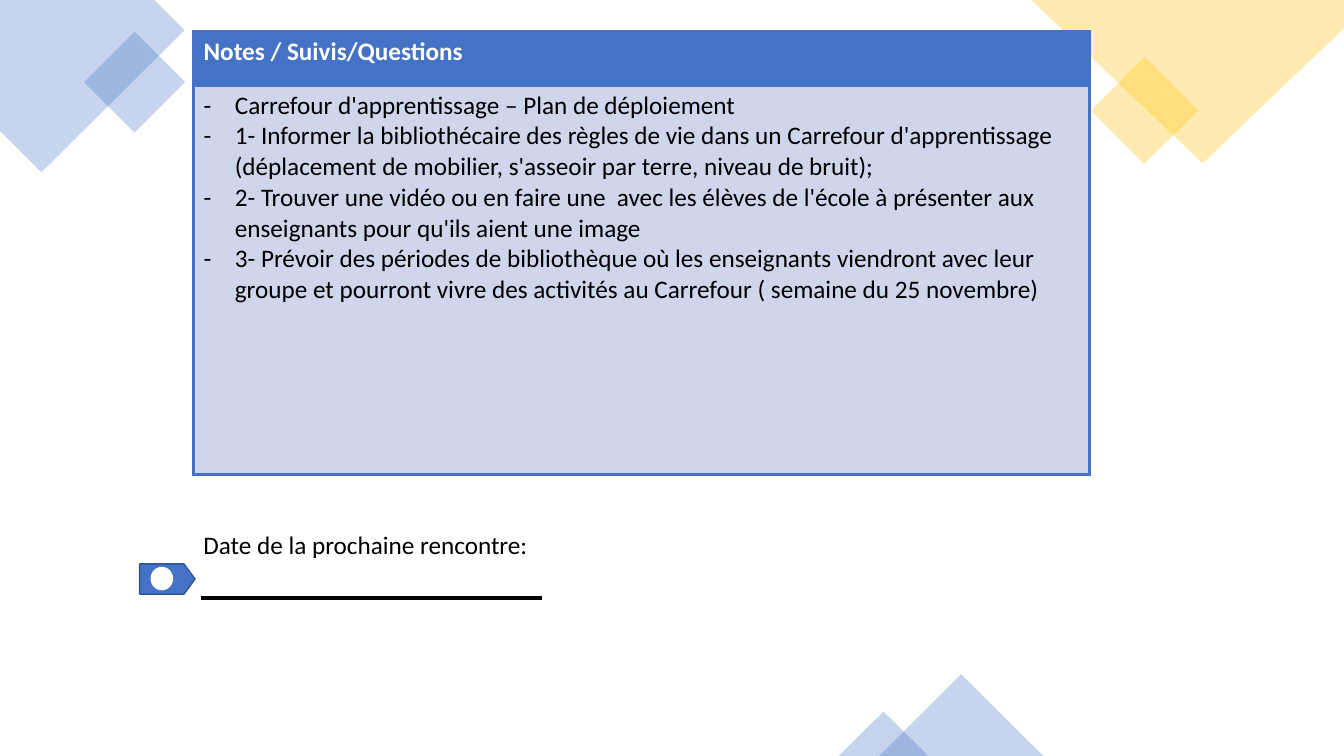
from typing import NamedTuple

from lxml import etree
from pptx import Presentation
from pptx import util as u
from pptx.dml.color import RGBColor
from pptx.enum import shapes, text
from pptx.oxml import ns

BLUE = RGBColor(0x44, 0x72, 0xC4)
DARK_BLUE = RGBColor(0x32, 0x54, 0x91)
PALE_BLUE = RGBColor(0xCF, 0xD5, 0xEA)
GOLD = RGBColor(0xFF, 0xC0, 0x00)
WHITE = RGBColor(0xFF, 0xFF, 0xFF)
BLACK = RGBColor(0x00, 0x00, 0x00)

SLIDE_WIDTH, SLIDE_HEIGHT = u.Inches(13.33), u.Inches(7.5)
FONT, FONT_SIZE = "Calibri", u.Pt(18)
BORDER_WIDTH = u.Pt(2.25)
DASH_INDENT = u.Inches(0.31)
VEIL_OPACITY = 30

KIND = shapes.MSO_SHAPE


class Box(NamedTuple):
    """A frame in percent of the slide's width and height."""
    left: float
    top: float
    width: float
    height: float


class Preset(NamedTuple):
    kind: KIND
    box: Box
    fill: RGBColor
    line: RGBColor | None = None
    rotation: int = 0
    opacity: int = 100


class Corner(NamedTuple):
    points: list[tuple[float, float]]
    fill: RGBColor


CORNERS = [
    Corner([(0, 0), (11.48, 0), (13.73, 4), (3.08, 22.8), (0, 17.33)], BLUE),
    Corner([(100, 0), (76.73, 0), (89.48, 21.6), (100, 3.73)], GOLD),
]
VEILS = [
    Preset(KIND.RECTANGLE, Box(7.35, 6.13, 5.33, 9.47), BLUE, rotation=315, opacity=VEIL_OPACITY),
    Preset(KIND.RECTANGLE, Box(82.35, 9.6, 5.63, 10), GOLD, rotation=315, opacity=VEIL_OPACITY),
    Preset(KIND.ISOSCELES_TRIANGLE, Box(65.4, 89.2, 12.23, 10.8), BLUE, opacity=VEIL_OPACITY),
    Preset(KIND.ISOSCELES_TRIANGLE, Box(62.4, 94.13, 6.68, 5.87), BLUE, opacity=VEIL_OPACITY),
]
MARKER = [
    Preset(KIND.FLOWCHART_OFFPAGE_CONNECTOR, Box(11.33, 72.93, 2.25, 7.33), BLUE, DARK_BLUE, 270),
    Preset(KIND.OVAL, Box(11.25, 75.07, 1.58, 2.93), WHITE, WHITE),
]

NOTES_BOX = Box(14.4, 4.2, 66.68, 58.54)
HEADING_HEIGHT = 7.07
HEADING = "Notes / Suivis/Questions"
NOTES = [
    "Carrefour d'apprentissage – Plan de déploiement",
    "1- Informer la bibliothécaire des règles de vie dans un Carrefour d'apprentissage "
    "(déplacement de mobilier, s'asseoir par terre, niveau de bruit);",
    "2- Trouver une vidéo ou en faire une  avec les élèves de l'école à présenter aux "
    "enseignants pour qu'ils aient une image",
    "3- Prévoir des périodes de bibliothèque où les enseignants viendront avec leur "
    "groupe et pourront vivre des activités au Carrefour ( semaine du 25 novembre)",
]
NEXT_MEETING = "Date de la prochaine rencontre:"
NEXT_MEETING_BOX = Box(14.4, 69.33, 25.95, 9.47)
DATE_LINE_LEFT, DATE_LINE_RIGHT, DATE_LINE_Y = 14.93, 40.35, 79.07


def across(share: float) -> int:
    return round(SLIDE_WIDTH * share / 100)


def down(share: float) -> int:
    return round(SLIDE_HEIGHT * share / 100)


def frame(box: Box) -> tuple[int, int, int, int]:
    return across(box.left), down(box.top), across(box.width), down(box.height)


def paint(shape, fill: RGBColor, line: RGBColor | None, opacity: int) -> None:
    shape.shadow.inherit = False
    shape.fill.solid()
    shape.fill.fore_color.rgb = fill
    if opacity < 100:
        color = shape.fill._xPr.find(f".//{ns.qn('a:srgbClr')}")
        etree.SubElement(color, ns.qn("a:alpha"), val=str(opacity * 1000))
    if line is None:
        shape.line.fill.background()
    else:
        shape.line.color.rgb = line
        shape.line.width = u.Pt(1)


def draw_corner(slide, corner: Corner) -> None:
    first, *rest = [(across(x), down(y)) for x, y in corner.points]
    outline = slide.shapes.build_freeform(*first)
    outline.add_line_segments(rest, close=True)
    paint(outline.convert_to_shape(), corner.fill, None, VEIL_OPACITY)


def draw_preset(slide, preset: Preset) -> None:
    shape = slide.shapes.add_shape(preset.kind, *frame(preset.box))
    shape.rotation = preset.rotation
    paint(shape, preset.fill, preset.line, preset.opacity)


def write(paragraph, words: str, color: RGBColor, bold: bool = False) -> None:
    run = paragraph.add_run()
    run.text = words
    run.font.name, run.font.size = FONT, FONT_SIZE
    run.font.bold = bold
    run.font.color.rgb = color


def add_dash(paragraph) -> None:
    """Give the paragraph a hanging dash as its bullet."""
    properties = paragraph._p.get_or_add_pPr()
    properties.set("marL", str(DASH_INDENT))
    properties.set("indent", str(-DASH_INDENT))
    etree.SubElement(properties, ns.qn("a:buFont"), typeface=FONT)
    etree.SubElement(properties, ns.qn("a:buChar"), char="-")


def style_cell(cell, fill: RGBColor) -> None:
    properties = cell._tc.get_or_add_tcPr()
    for side in ("lnL", "lnR", "lnT", "lnB"):
        border = etree.SubElement(properties, ns.qn(f"a:{side}"), w=str(BORDER_WIDTH))
        solid = etree.SubElement(border, ns.qn("a:solidFill"))
        etree.SubElement(solid, ns.qn("a:srgbClr"), val=str(BLUE))
    cell.fill.solid()
    cell.fill.fore_color.rgb = fill


def draw_notes(slide) -> None:
    table = slide.shapes.add_table(2, 1, *frame(NOTES_BOX)).table
    table.rows[0].height = down(HEADING_HEIGHT)
    table.rows[1].height = down(NOTES_BOX.height - HEADING_HEIGHT)
    heading, body = table.cell(0, 0), table.cell(1, 0)
    style_cell(heading, BLUE)
    style_cell(body, PALE_BLUE)
    write(heading.text_frame.paragraphs[0], HEADING, WHITE, bold=True)
    for index, note in enumerate(NOTES):
        content = body.text_frame
        paragraph = content.add_paragraph() if index else content.paragraphs[0]
        add_dash(paragraph)
        write(paragraph, note, BLACK)


def draw_next_meeting(slide) -> None:
    label = slide.shapes.add_textbox(*frame(NEXT_MEETING_BOX)).text_frame
    label.word_wrap = False
    label.vertical_anchor = text.MSO_ANCHOR.TOP
    write(label.paragraphs[0], NEXT_MEETING, BLACK)
    for part in MARKER:
        draw_preset(slide, part)
    date_line = slide.shapes.add_connector(
        shapes.MSO_CONNECTOR.STRAIGHT,
        across(DATE_LINE_LEFT), down(DATE_LINE_Y),
        across(DATE_LINE_RIGHT), down(DATE_LINE_Y),
    )
    date_line.line.color.rgb = BLACK
    date_line.line.width = u.Pt(3)
    etree.SubElement(date_line._element.spPr, ns.qn("a:effectLst"))


def main() -> None:
    deck = Presentation()
    deck.slide_width, deck.slide_height = SLIDE_WIDTH, SLIDE_HEIGHT
    slide = deck.slides.add_slide(deck.slide_layouts[6])
    for corner in CORNERS:
        draw_corner(slide, corner)
    for veil in VEILS:
        draw_preset(slide, veil)
    draw_notes(slide)
    draw_next_meeting(slide)
    deck.save("out.pptx")


if __name__ == "__main__":
    main()
